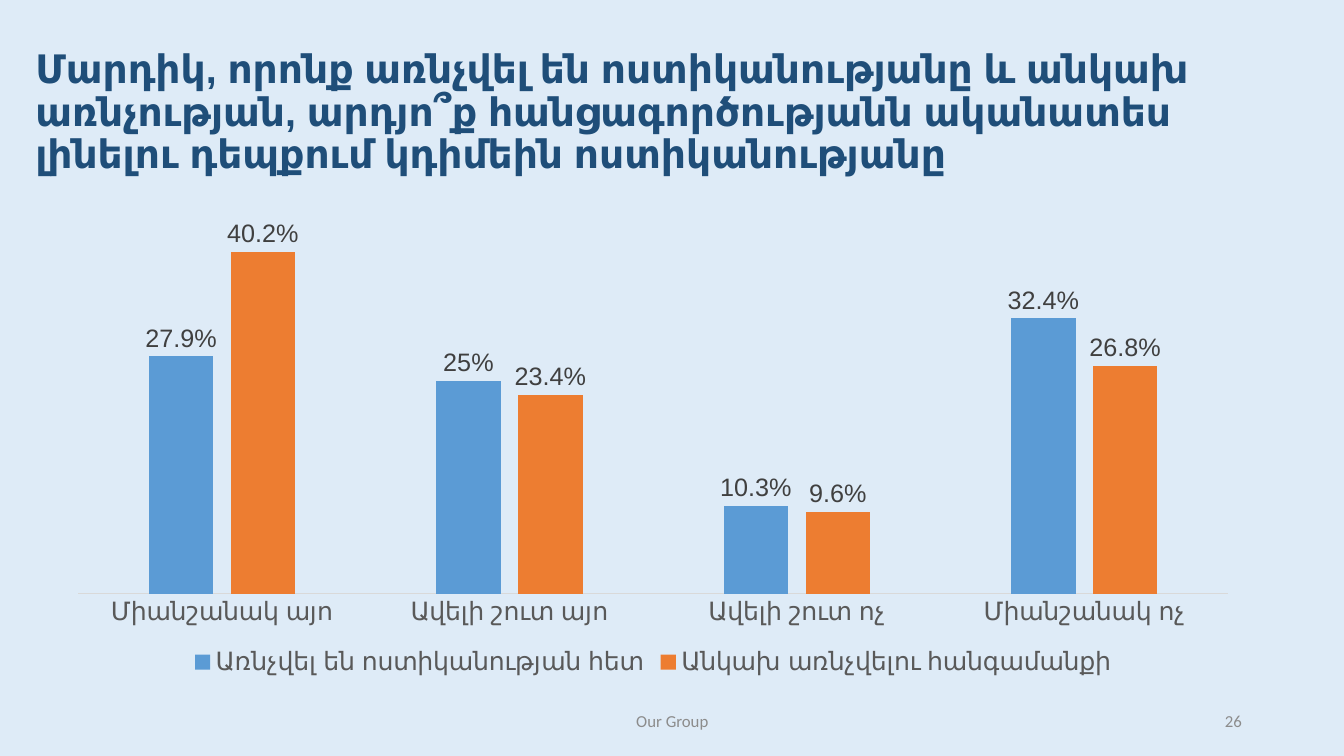
import pptx
import pptx.util
import pptx.dml.color
import pptx.chart.data
import pptx.enum.chart
import pptx.enum.text

Cm, Pt = pptx.util.Cm, pptx.util.Pt
Align = pptx.enum.text.PP_ALIGN


def color(code):
    return pptx.dml.color.RGBColor.from_string(code)


def style(font, size, code, face="Arial", bold=False):
    font.size, font.name, font.bold = Pt(size), face, bold
    font.color.rgb = color(code)


def write(frame, text, align=Align.LEFT, space=1.0, **form):
    frame.word_wrap = True
    frame.vertical_anchor = pptx.enum.text.MSO_ANCHOR.MIDDLE
    para = frame.paragraphs[0]
    para.alignment, para.line_spacing = align, space
    run = para.add_run()
    run.text = text
    style(run.font, **form)


class Deck:
    back, title, foot = "DEEBF7", "1F4E79", "8C8C8C"
    axis, label, line = "595959", "404040", "D9D9D9"
    bars = ("5B9BD5", "ED7D31")

    def __init__(self):
        self.file = pptx.Presentation()
        self.file.slide_width, self.file.slide_height = Cm(33.87), Cm(19.05)
        self.slide = self.file.slides.add_slide(self.file.slide_layouts[6])
        fill = self.slide.background.fill
        fill.solid()
        fill.fore_color.rgb = color(self.back)

    def text(self, box, text, **form):
        shape = self.slide.shapes.add_textbox(*map(Cm, box))
        write(shape.text_frame, text, **form)

    def chart(self, box, cats, series):
        data = pptx.chart.data.CategoryChartData(number_format='General"%"')
        data.categories = cats
        for name, vals in series.items():
            data.add_series(name, vals)
        kind = pptx.enum.chart.XL_CHART_TYPE.COLUMN_CLUSTERED
        chart = self.slide.shapes.add_chart(kind, *map(Cm, box), data).chart
        style(chart.font, 18, self.axis)
        chart.has_title = False

        # Legend
        chart.has_legend = True
        chart.legend.position = pptx.enum.chart.XL_LEGEND_POSITION.BOTTOM
        chart.legend.include_in_layout = False
        style(chart.legend.font, 18, self.axis)

        # Axes
        cat, val = chart.category_axis, chart.value_axis
        none = pptx.enum.chart.XL_TICK_MARK.NONE
        cat.major_tick_mark = cat.minor_tick_mark = none
        cat.format.line.color.rgb = color(self.line)
        cat.format.line.width = Pt(0.75)
        style(cat.tick_labels.font, 18, self.axis)
        val.minimum_scale, val.maximum_scale = 0, 45
        val.has_major_gridlines = val.visible = False

        # Bars and their labels
        plot = chart.plots[0]
        plot.gap_width, plot.overlap = 219, -27
        plot.vary_by_categories = False
        for bar, code in zip(plot.series, self.bars):
            bar.format.fill.solid()
            bar.format.fill.fore_color.rgb = color(code)
            tags = bar.data_labels
            tags.show_value = True
            tags.number_format = 'General"%"'
            tags.number_format_is_linked = False
            tags.position = pptx.enum.chart.XL_LABEL_POSITION.OUTSIDE_END
            style(tags.font, 18, self.label)


def main():
    deck = Deck()

    # Title
    deck.text((0.64, 1.02, 33.02, 3.68),
              "Մարդիկ, որոնք առնչվել են ոստիկանությանը և անկախ առնչության, "
              "արդյո՞ք հանցագործությանն ականատես լինելու դեպքում կդիմեին "
              "ոստիկանությանը",
              size=28, code=deck.title, bold=True, space=0.9)

    # Chart
    deck.chart((1.37, 5.08, 30.18, 12.09),
               ("Միանշանակ այո", "Ավելի շուտ այո",
                "Ավելի շուտ ոչ", "Միանշանակ ոչ"),
               {"Առնչվել են ոստիկանության հետ": (27.9, 25, 10.3, 32.4),
                "Անկախ առնչվելու հանգամանքի": (40.2, 23.4, 9.6, 26.8)})

    # Footer and page number
    for left, width, text, align in ((11.23, 11.43, "Our Group", Align.CENTER),
                                     (23.93, 7.62, "26", Align.RIGHT)):
        deck.text((left, 17.65, width, 1.02), text, align=align,
                  size=12, code=deck.foot, face="Calibri")

    deck.file.save("out.pptx")


if __name__ == "__main__":
    main()
